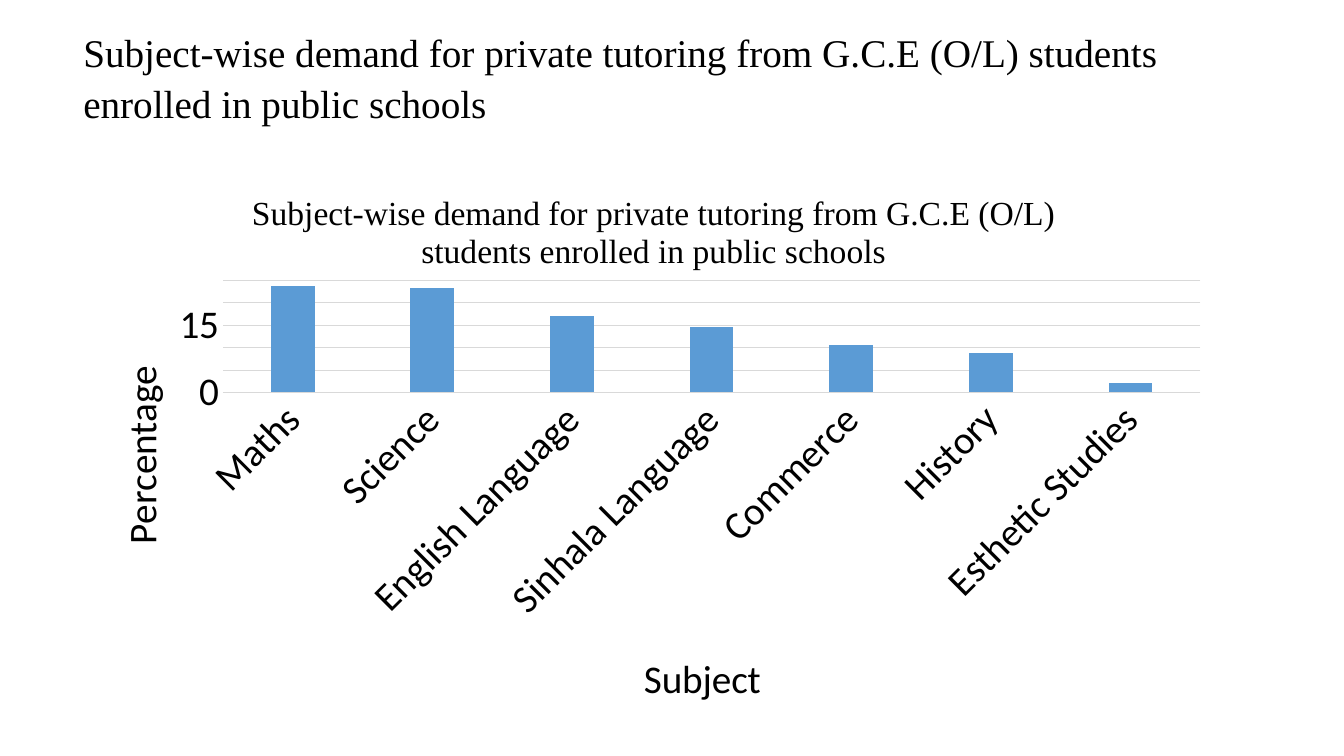
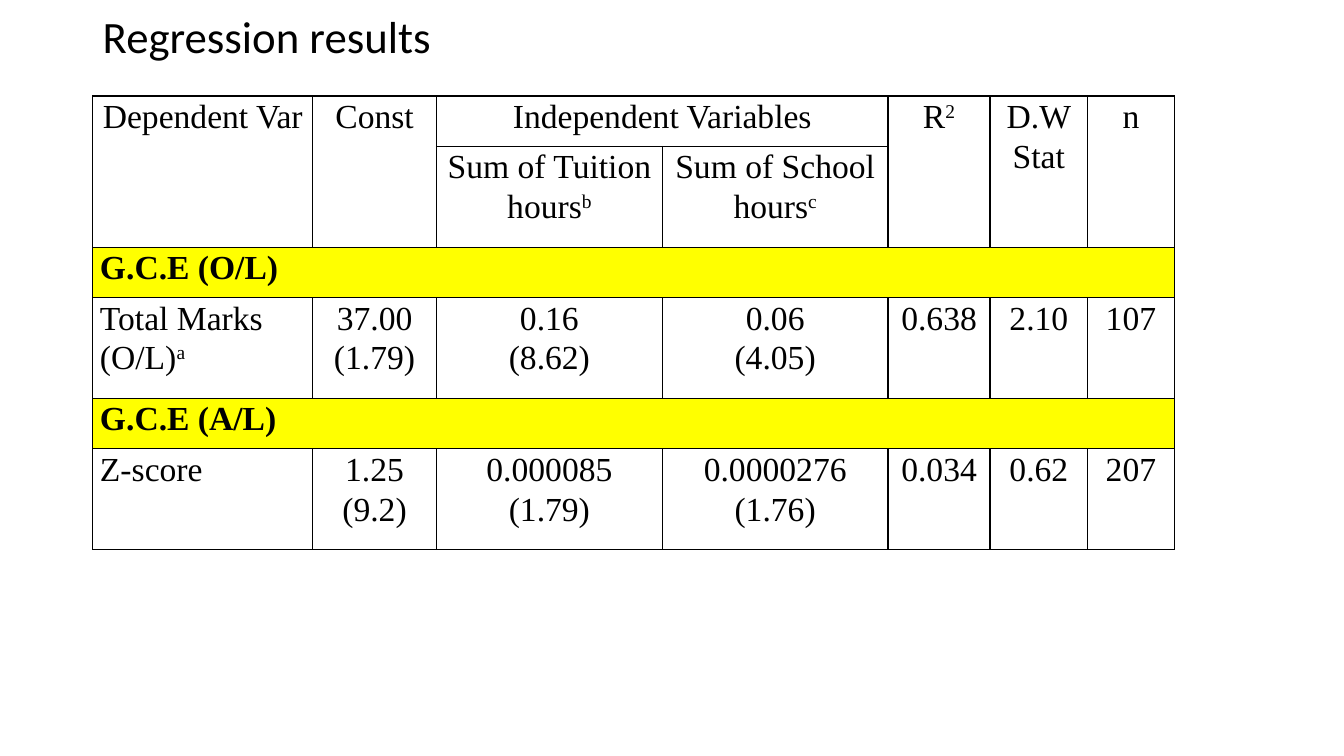
"""Build two slides on private tutoring demand and regression results."""
import pptx
import pptx.chart.data
import pptx.dml.color
import pptx.enum.chart
import pptx.enum.text
import pptx.oxml
import pptx.oxml.ns
import pptx.util
from pptx.util import Cm, Pt

COLORS = {"text": "000000", "paper": "FFFFFF", "bar": "5B9BD5",
          "grid": "D9D9D9", "band": "FFFF00"}
SERIF = "Times New Roman"
SANS = "Calibri"
DEMAND_TITLE = ("Subject-wise demand for private tutoring from G.C.E (O/L) "
                "students enrolled in public schools")
DEMAND = {"Maths": 23.7, "Science": 23.2, "English Language": 17,
          "Sinhala Language": 14.6, "Commerce": 10.5, "History": 8.8,
          "Esthetic Studies": 2.2}
COLUMN_WIDTHS = [5.54, 3.12, 5.69, 5.69, 2.57, 2.46, 2.18]
ROW_HEIGHTS = [1.27, 2.54] * 3
RESULTS = [
    ["Dependent Var", "Const", "Independent Variables", "", "R^2", "D.W\nStat", "n"],
    ["", "", "Sum of Tuition hours^b", "Sum of School hours^c", "", "", ""],
    ["G.C.E (O/L)"] + [""] * 6,
    ["Total Marks (O/L)^a", "37.00\n(1.79)", "0.16\n(8.62)", "0.06\n(4.05)",
     "0.638", "2.10", "107"],
    ["G.C.E (A/L)"] + [""] * 6,
    ["Z-score", "1.25\n(9.2)", "0.000085\n(1.79)", "0.0000276\n(1.76)",
     "0.034", "0.62", "207"],
]
BAND_ROWS = (2, 4)
MERGES = ([((0, column), (1, column)) for column in (0, 1, 4, 5, 6)]
          + [((0, 2), (0, 3))]
          + [((row, 0), (row, 6)) for row in BAND_ROWS])


def color(name):
    return pptx.dml.color.RGBColor.from_string(COLORS[name])


def style_font(font, name, size, bold=False):
    font.name = name
    font.size = Pt(size)
    font.bold = bold
    font.color.rgb = color("text")


def style_line(line, name, width):
    line.color.rgb = color(name)
    line.width = Pt(width)


def add_blank_slide(deck):
    return deck.slides.add_slide(deck.slide_layouts[6])


def add_title(slide, text, place, font, size, spacing):
    box = slide.shapes.add_textbox(*map(Cm, place))
    frame = box.text_frame
    frame.word_wrap = True
    frame.vertical_anchor = pptx.enum.text.MSO_ANCHOR.MIDDLE
    para = frame.paragraphs[0]
    para.text = text
    para.line_spacing = spacing
    style_font(para.font, font, size)


def set_layout(element, index, inner=False, **fractions):
    tag = pptx.oxml.ns.qn("c:layout")
    for old in element.findall(tag):
        element.remove(old)
    target = '<c:layoutTarget val="inner"/>' if inner else ""
    modes = "".join(f'<c:{key}Mode val="edge"/>' for key in "xy")
    values = "".join(f'<c:{key} val="{value}"/>' for key, value in fractions.items())
    element.insert(index, pptx.oxml.parse_xml(
        f'<c:layout {pptx.oxml.ns.nsdecls("c")}><c:manualLayout>'
        f'{target}{modes}{values}</c:manualLayout></c:layout>'))


def rotate_text(parent, degrees):
    body = next(parent.iter(pptx.oxml.ns.qn("a:bodyPr")))
    body.set("rot", str(degrees * 60000))
    body.set("vert", "horz")


def set_chart_title(title, text, font, size, x, y):
    para = title.text_frame.paragraphs[0]
    para.text = text
    style_font(para.font, font, size)
    set_layout(title._element, 1, x=x, y=y)


def style_axis(axis):
    axis.major_tick_mark = pptx.enum.chart.XL_TICK_MARK.NONE
    axis.minor_tick_mark = pptx.enum.chart.XL_TICK_MARK.NONE
    style_font(axis.tick_labels.font, SANS, 28)


def add_demand_chart(slide):
    data = pptx.chart.data.CategoryChartData()
    data.categories = list(DEMAND)
    data.add_series("Series 1", list(DEMAND.values()))
    chart = slide.shapes.add_chart(
        pptx.enum.chart.XL_CHART_TYPE.COLUMN_CLUSTERED,
        Cm(1.85), Cm(3.96), Cm(28.98), Cm(14.12), data).chart
    style_font(chart.font, SANS, 28)
    chart.has_legend = False
    set_chart_title(chart.chart_title, DEMAND_TITLE, SERIF, 24, 0.15, 0.05)

    plot = chart.plots[0]
    plot.gap_width = 219
    plot.overlap = -27
    plot.vary_by_categories = False
    fill = plot.series[0].format.fill
    fill.solid()
    fill.fore_color.rgb = color("bar")

    subjects, percentages = chart.category_axis, chart.value_axis
    style_axis(subjects)
    style_axis(percentages)
    style_line(subjects.format.line, "grid", 0.75)
    rotate_text(subjects._element.find(pptx.oxml.ns.qn("c:txPr")), -45)
    set_chart_title(subjects.axis_title, "Subject", SANS, 28, 0.49, 0.87)
    percentages.minimum_scale = 0
    percentages.maximum_scale = 25
    percentages.major_unit = 5
    percentages.format.line.fill.background()
    style_line(percentages.major_gridlines.format.line, "grid", 0.75)
    set_chart_title(percentages.axis_title, "Percentage", SANS, 28, 0.03, 0.36)
    rotate_text(percentages.axis_title._element, -90)
    set_layout(chart._chartSpace.chart.plotArea, 0, inner=True,
               x=0.13, y=0.22, w=0.85, h=0.2)


def add_borders(cell):
    properties = cell._tc.get_or_add_tcPr()
    for side in "LRTB":
        properties.append(pptx.oxml.parse_xml(
            f'<a:ln{side} {pptx.oxml.ns.nsdecls("a")} w="12700"><a:solidFill>'
            f'<a:srgbClr val="{COLORS["text"]}"/></a:solidFill></a:ln{side}>'))


def fill_cell(cell, text, centered, band):
    add_borders(cell)
    cell.fill.solid()
    cell.fill.fore_color.rgb = color("band" if band else "paper")
    cell.margin_left = cell.margin_right = Cm(0.18)
    cell.margin_top = cell.margin_bottom = 0
    align = pptx.enum.text.PP_ALIGN
    for index, line in enumerate(text.split("\n")):
        frame = cell.text_frame
        para = frame.add_paragraph() if index else frame.paragraphs[0]
        para.alignment = align.CENTER if centered else align.LEFT
        para.line_spacing = 1.07
        style_font(para.font, SERIF, 24, band)
        base, _, superscript = line.partition("^")
        if base:
            para.add_run().text = base
        if superscript:
            span = para.add_run()
            span.text = superscript
            span._r.get_or_add_rPr().set("baseline", "30000")


def add_results_table(slide):
    table = slide.shapes.add_table(
        len(ROW_HEIGHTS), len(COLUMN_WIDTHS), Cm(2.34), Cm(2.42),
        Cm(sum(COLUMN_WIDTHS)), Cm(sum(ROW_HEIGHTS))).table
    table.first_row = table.horz_banding = False
    for column, width in zip(table.columns, COLUMN_WIDTHS):
        column.width = Cm(width)
    for row, height in zip(table.rows, ROW_HEIGHTS):
        row.height = Cm(height)
    for first, last in MERGES:
        table.cell(*first).merge(table.cell(*last))
    for row, texts in enumerate(RESULTS):
        for column, text in enumerate(texts):
            fill_cell(table.cell(row, column), text,
                      row < 2 or column > 0, row in BAND_ROWS)


def main():
    deck = pptx.Presentation()
    deck.slide_width, deck.slide_height = Cm(33.87), Cm(19.05)

    demand = add_blank_slide(deck)
    add_demand_chart(demand)
    add_title(demand, DEMAND_TITLE, (1.85, 0.5, 30.7, 2.82), SERIF, 28, 1.07)

    regression = add_blank_slide(deck)
    add_title(regression, "Regression results", (2.34, 0, 29.2, 1.98), SANS, 32, 0.9)
    add_results_table(regression)

    deck.save("out.pptx")


if __name__ == "__main__":
    main()
